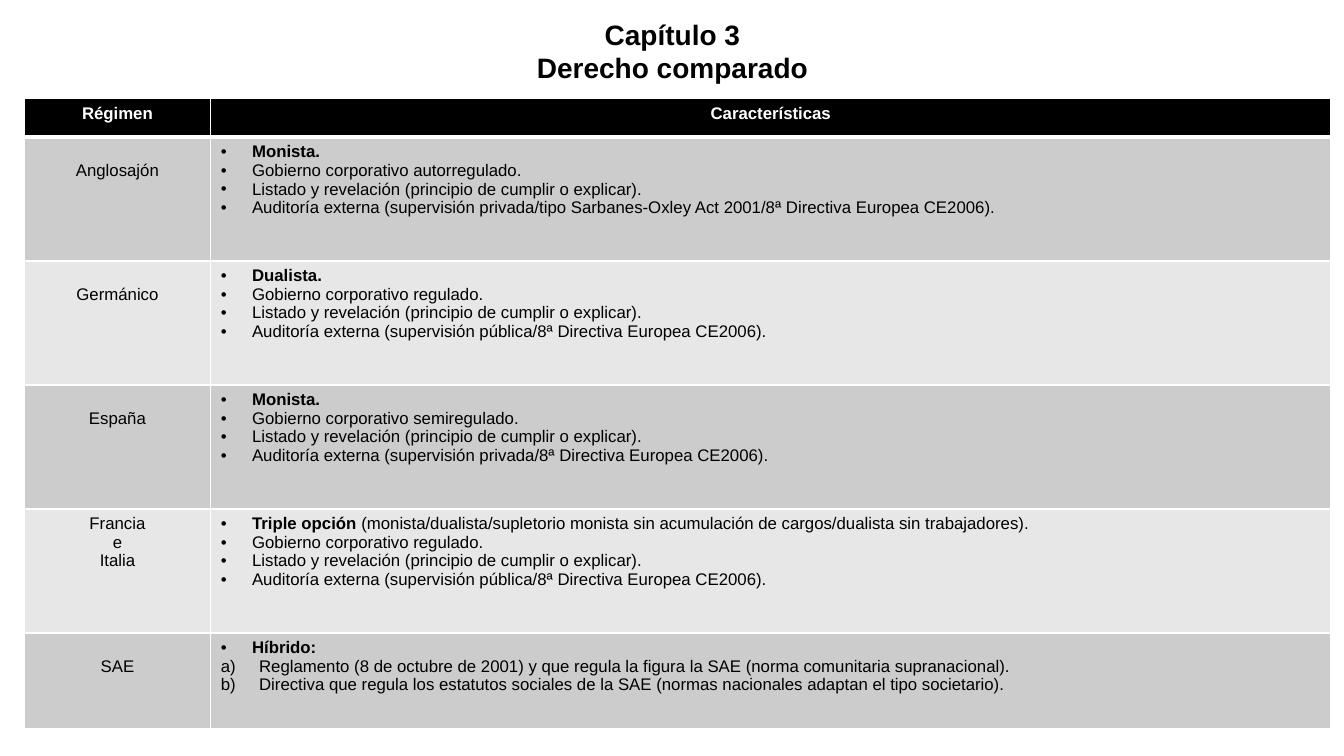
import pptx
import pptx.util
import pptx.dml.color
import pptx.enum.text
import pptx.oxml
import pptx.oxml.ns
from dataclasses import dataclass

Inches, Pt = pptx.util.Inches, pptx.util.Pt
ALIGN = pptx.enum.text.PP_ALIGN


@dataclass(frozen=True)
class Theme:
    font: str = "Arial"
    title_size: int = 20
    body_size: int = 12
    ink: str = "000000"
    paper: str = "FFFFFF"
    bands: tuple = ("CCCCCC", "E7E7E7")
    rule: int = 1
    header_rule: int = 3


THEME = Theme()
SLIDE_W, SLIDE_H = 13.33, 7.5
TITLE_BOX = (0.66, 0.18, 12.02, 0.68)
TABLE_BOX = (0.24, 0.98, 12.96, 6.25)
COLUMN_SHARES = (1.85, 11.11)
ROW_SHARES = (0.38, 1.23, 1.23, 1.23, 1.23, 0.95)
CELL_TOP = 0.05
LINE_HEIGHT = 0.19
BULLET = ("buChar", 'char="•"', 0.31, ALIGN.LEFT)
LETTER = ("buAutoNum", 'type="alphaLcParenR"', 0.38, ALIGN.JUSTIFY)

TITLE = ("Capítulo 3", "Derecho comparado")
HEADER = ("Régimen", "Características")
DISCLOSURE = "Listado y revelación (principio de cumplir o explicar)."


def audit(supervision):
    return f"Auditoría externa (supervisión {supervision}/8ª Directiva Europea CE2006)."


def regime(names, lead, detail, governance, supervision):
    points = (f"Gobierno corporativo {governance}.", DISCLOSURE, audit(supervision))
    return names, lead, detail, points, BULLET


REGIMES = (
    regime(("Anglosajón",), "Monista.", "", "autorregulado",
           "privada/tipo Sarbanes-Oxley Act 2001"),
    regime(("Germánico",), "Dualista.", "", "regulado", "pública"),
    regime(("España",), "Monista.", "", "semiregulado", "privada"),
    regime(("Francia", "e", "Italia"), "Triple opción ",
           "(monista/dualista/supletorio monista sin acumulación de cargos/dualista sin trabajadores).",
           "regulado", "pública"),
    (("SAE",), "Híbrido:", "",
     ("Reglamento (8 de octubre de 2001) y que regula la figura la SAE (norma comunitaria supranacional).",
      "Directiva que regula los estatutos sociales de la SAE (normas nacionales adaptan el tipo societario)."),
     LETTER),
)


def rgb(color):
    return pptx.dml.color.RGBColor.from_string(color)


def set_all(obj, values):
    for name, value in values.items():
        setattr(obj, name, value)


def add_run(p, text, size=THEME.body_size, color=THEME.ink, bold=False):
    r = p.add_run()
    r.text = text
    set_all(r.font, {"name": THEME.font, "size": Pt(size), "bold": bold})
    r.font.color.rgb = rgb(color)


def paragraphs(tf, count):
    """Return count paragraphs, the first being the one already there."""
    return [tf.paragraphs[0]] + [tf.add_paragraph() for _ in range(count - 1)]


def set_marker(p, marker):
    """Give a paragraph its bullet or letter, with a hanging indent."""
    tag, attribute, indent, p.alignment = marker
    pPr = p._p.get_or_add_pPr()
    pPr.set("marL", str(Inches(indent)))
    pPr.set("indent", str(-Inches(indent)))
    ns = pptx.oxml.ns.nsdecls("a")
    pPr.append(pptx.oxml.parse_xml(f'<a:buFont {ns} typeface="{THEME.font}"/>'))
    pPr.append(pptx.oxml.parse_xml(f"<a:{tag} {ns} {attribute}/>"))


def style_cell(cell, fill, top_rule=THEME.rule, bottom_rule=THEME.rule):
    tcPr = cell._tc.get_or_add_tcPr()
    rules = {"L": THEME.rule, "R": THEME.rule, "T": top_rule, "B": bottom_rule}
    for side, width in rules.items():
        tcPr.append(pptx.oxml.parse_xml(
            f'<a:ln{side} {pptx.oxml.ns.nsdecls("a")} w="{Pt(width)}"><a:solidFill>'
            f'<a:srgbClr val="{THEME.paper}"/></a:solidFill></a:ln{side}>'))
    cell.fill.solid()
    cell.fill.fore_color.rgb = rgb(fill)
    cell.margin_top = Inches(CELL_TOP)


def fill_header(cells):
    for cell, text in zip(cells, HEADER):
        style_cell(cell, THEME.ink, bottom_rule=THEME.header_rule)
        p = cell.text_frame.paragraphs[0]
        p.alignment = ALIGN.CENTER
        add_run(p, text, color=THEME.paper, bold=True)


def fill_regime(cells, content, fill, top_rule):
    names, lead, detail, points, marker = content
    name_cell, points_cell = cells
    for cell in cells:
        style_cell(cell, fill, top_rule)
    if len(names) == 1:
        name_cell.margin_top = Inches(CELL_TOP + LINE_HEIGHT)
    for p, name in zip(paragraphs(name_cell.text_frame, len(names)), names):
        p.alignment = ALIGN.CENTER
        add_run(p, name)
    first, *rest = paragraphs(points_cell.text_frame, len(points) + 1)
    set_marker(first, BULLET)
    add_run(first, lead, bold=True)
    if detail:
        add_run(first, detail)
    for p, point in zip(rest, points):
        set_marker(p, marker)
        add_run(p, point)


def add_title(slide, box):
    sp = slide.shapes.title
    set_all(sp, dict(zip(("left", "top", "width", "height"), map(Inches, box))))
    tf = sp.text_frame
    set_all(tf, {"word_wrap": True,
                 "auto_size": pptx.enum.text.MSO_AUTO_SIZE.NONE,
                 "vertical_anchor": pptx.enum.text.MSO_ANCHOR.MIDDLE})
    for p, line in zip(paragraphs(tf, len(TITLE)), TITLE):
        set_all(p, {"alignment": ALIGN.CENTER, "line_spacing": 0.96,
                    "space_before": Pt(0)})
        add_run(p, line, THEME.title_size, bold=True)


def add_regime_table(slide, box):
    table = slide.shapes.add_table(
        len(ROW_SHARES), len(COLUMN_SHARES), *map(Inches, box)).table
    for column, share in zip(table.columns, COLUMN_SHARES):
        column.width = Inches(box[2] * share / sum(COLUMN_SHARES))
    for row, share in zip(table.rows, ROW_SHARES):
        row.height = Inches(box[3] * share / sum(ROW_SHARES))
    header, *body = [list(row.cells) for row in table.rows]
    fill_header(header)
    for i, (cells, content) in enumerate(zip(body, REGIMES)):
        top_rule = THEME.rule if i else THEME.header_rule
        fill_regime(cells, content, THEME.bands[i % 2], top_rule)


def main():
    prs = pptx.Presentation()
    set_all(prs, {"slide_width": Inches(SLIDE_W), "slide_height": Inches(SLIDE_H)})
    slide = prs.slides.add_slide(prs.slide_layouts.get_by_name("Title Only"))
    add_title(slide, TITLE_BOX)
    add_regime_table(slide, TABLE_BOX)
    prs.save("out.pptx")


if __name__ == "__main__":
    main()
